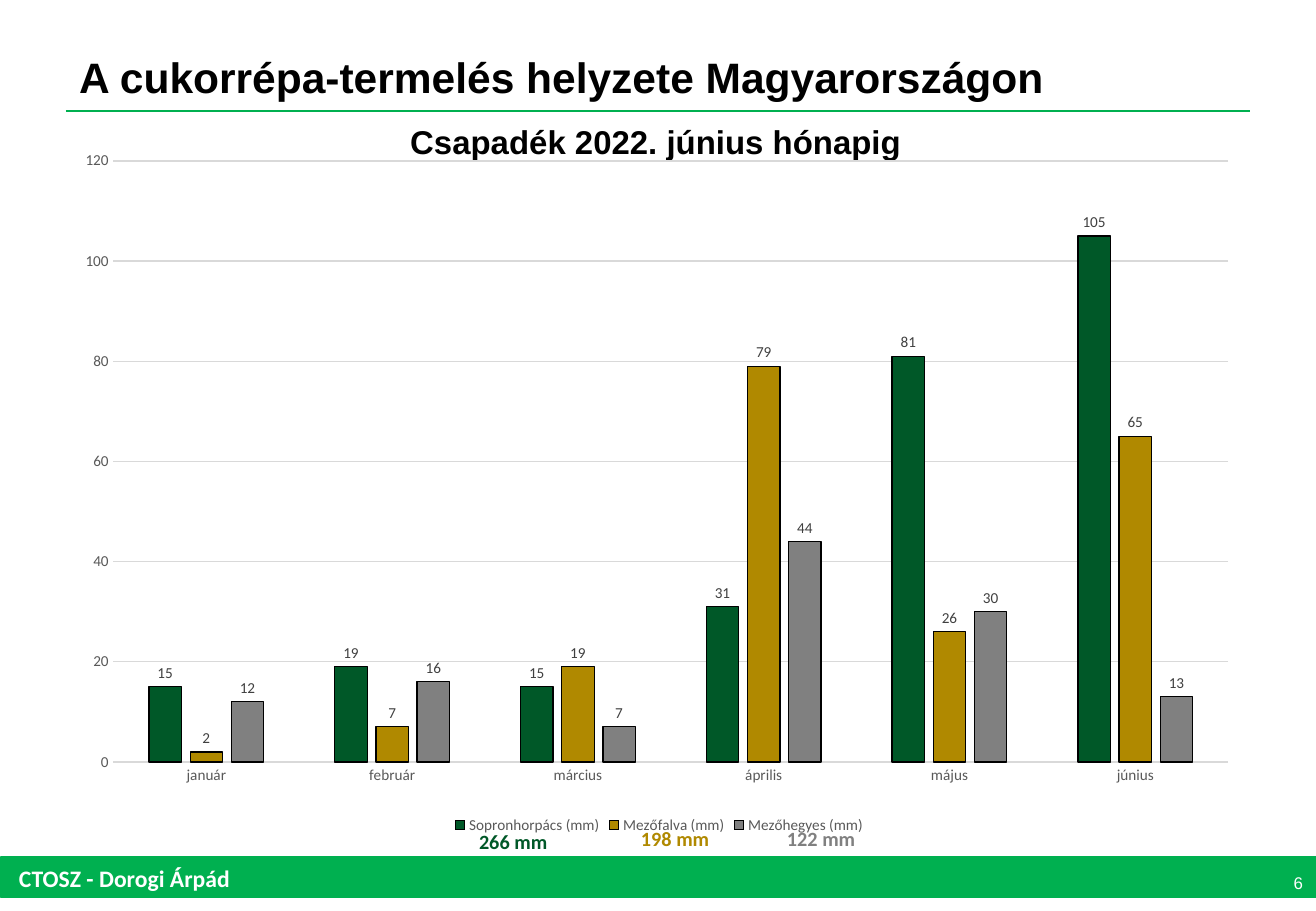
from lxml import etree
from pptx import Presentation
from pptx.chart.data import CategoryChartData
from pptx.dml.color import RGBColor
from pptx.enum.chart import XL_CHART_TYPE, XL_LABEL_POSITION, XL_LEGEND_POSITION, XL_TICK_MARK
from pptx.enum.shapes import MSO_CONNECTOR, MSO_SHAPE
from pptx.enum.text import MSO_ANCHOR, PP_ALIGN
from pptx.oxml import parse_xml
from pptx.oxml.ns import nsdecls, qn
from pptx.util import Pt

EMU_PER_PX = 7526
COLUMNS = XL_CHART_TYPE.COLUMN_CLUSTERED
OUTSIDE = XL_LABEL_POSITION.OUTSIDE_END
BOTTOM = XL_LEGEND_POSITION.BOTTOM
NO_TICK = XL_TICK_MARK.NONE
STRAIGHT = MSO_CONNECTOR.STRAIGHT
RECTANGLE = MSO_SHAPE.RECTANGLE
TOP, MIDDLE = MSO_ANCHOR.TOP, MSO_ANCHOR.MIDDLE
LEFT, CENTER, RIGHT = PP_ALIGN.LEFT, PP_ALIGN.CENTER, PP_ALIGN.RIGHT

COLORS = {
    "green": "00B050", "black": "000000", "white": "FFFFFF",
    "forest": "005828", "gold": "B08900", "gray": "808080",
    "axis": "595959", "label": "404040", "grid": "D9D9D9",
}
MONTHS = ["január", "február", "március", "április", "május", "június"]
STATIONS = [
    ("Sopronhorpács (mm)", "forest", [15, 19, 15, 31, 81, 105]),
    ("Mezőfalva (mm)", "gold", [2, 7, 19, 79, 26, 65]),
    ("Mezőhegyes (mm)", "gray", [12, 16, 7, 44, 30, 13]),
]
TOTALS = [
    ("266 mm", "forest", (467, 823, 143, 36)),
    ("198 mm", "gold", (629, 820, 106, 36)),
    ("122 mm", "gray", (775, 820, 163, 36)),
]
PLOT_LAYOUT = {"x": 0.04, "y": 0.03, "w": 0.94, "h": 0.86}
WIDE_INSETS = (15, 7)
NARROW_INSETS = (12, 6)


def px(*lengths):
    """Turn px lengths into EMU."""
    return [length * EMU_PER_PX for length in lengths]


def rgb(name):
    """Return a named colour."""
    return RGBColor.from_string(COLORS[name])


class SlideBuilder:
    """Holds the style and the current slide."""

    def __init__(self, deck):
        """Add a title-only slide to the deck."""
        self.page = deck.slides.add_slide(deck.slide_layouts[5])
        self.shapes = self.page.shapes

    def style(self, font, size, color, bold=False, name="Calibri"):
        """Apply format values to a font."""
        values = {"size": Pt(size), "bold": bold, "name": name}
        for key, value in values.items():
            setattr(font, key, value)
        font.color.rgb = rgb(color)

    def outline(self, line, color, width=0.75):
        """Set the colour and width of a line."""
        line.color.rgb = rgb(color)
        line.width = Pt(width)

    def fill_text(self, box, text, align, anchor, insets, wrap, **font):
        """Fill a box with one formatted paragraph."""
        side, edge = px(*insets)
        values = {
            "word_wrap": wrap, "vertical_anchor": anchor,
            "margin_left": side, "margin_right": side,
            "margin_top": edge, "margin_bottom": edge,
        }
        for key, value in values.items():
            setattr(box.text_frame, key, value)
        para = box.text_frame.paragraphs[0]
        para.alignment = align
        span = para.add_run()
        span.text = text
        self.style(span.font, **font)

    def title(self, text, place, **font):
        """Place and format the title."""
        box = self.shapes.title
        box.left, box.top, box.width, box.height = px(*place)
        self.fill_text(box, text, LEFT, TOP, WIDE_INSETS, True, **font)

    def text(self, text, place, align=LEFT, anchor=TOP,
             insets=NARROW_INSETS, wrap=True, **font):
        """Add a text box."""
        box = self.shapes.add_textbox(*px(*place))
        self.fill_text(box, text, align, anchor, insets, wrap, **font)

    def band(self, place, color):
        """Add a filled rectangle."""
        shape = self.shapes.add_shape(RECTANGLE, *px(*place))
        shape.shadow.inherit = False
        shape.fill.solid()
        shape.fill.fore_color.rgb = rgb(color)
        self.outline(shape.line, color, 2)

    def rule(self, ends, color):
        """Add a straight line."""
        line = self.shapes.add_connector(STRAIGHT, *px(*ends))
        self.outline(line.line, color)
        etree.SubElement(line._element.spPr, qn("a:effectLst"))

    def columns(self, place, months, stations):
        """Add the clustered column chart."""
        data = CategoryChartData()
        data.categories = months
        for name, _, values in stations:
            data.add_series(name, values)
        chart = self.shapes.add_chart(COLUMNS, *px(*place), data).chart
        chart.has_title = False
        self.style(chart.font, 10, "black")
        chart.has_legend = True
        chart.legend.position = BOTTOM
        chart.legend.include_in_layout = False
        self.style(chart.legend.font, 9, "axis")
        self.axes(chart)
        plot = chart.plots[0]
        plot.vary_by_categories = False
        plot.gap_width, plot.overlap = 219, -27
        for series, (_, color, _) in zip(plot.series, stations):
            self.series(series, color)
        self.plot_area(chart)

    def axes(self, chart):
        """Format both axes and the grid."""
        for axis in (chart.category_axis, chart.value_axis):
            axis.major_tick_mark = axis.minor_tick_mark = NO_TICK
            self.style(axis.tick_labels.font, 9, "axis")
        self.outline(chart.category_axis.format.line, "grid")
        scale = chart.value_axis
        scale.minimum_scale, scale.maximum_scale, scale.major_unit = 0, 120, 20
        scale.format.line.fill.background()
        self.outline(scale.major_gridlines.format.line, "grid")

    def series(self, series, color):
        """Colour and label one series."""
        series.format.fill.solid()
        series.format.fill.fore_color.rgb = rgb(color)
        self.outline(series.format.line, "black")
        labels = series.data_labels
        labels.show_value = True
        labels.position = OUTSIDE
        labels.number_format = "0"
        labels.number_format_is_linked = False
        self.style(labels.font, 9, "label")

    def plot_area(self, chart):
        """Fix the inner plot area inside the chart."""
        modes = "".join(f'<c:{key}Mode val="edge"/>' for key in "xy")
        sizes = "".join(f'<c:{key} val="{value}"/>' for key, value in PLOT_LAYOUT.items())
        layout = parse_xml(
            f'<c:layout {nsdecls("c")}><c:manualLayout><c:layoutTarget val="inner"/>'
            f"{modes}{sizes}</c:manualLayout></c:layout>")
        area = chart._chartSpace.chart.plotArea
        for old in area.findall(qn("c:layout")):
            area.remove(old)
        area.insert(0, layout)


def main():
    """Build the rainfall slide."""
    deck = Presentation()
    deck.slide_width, deck.slide_height = px(1316, 911)
    slide = SlideBuilder(deck)
    slide.rule((66, 111, 1250, 111), "green")
    slide.band((1, 858, 1316, 38), "green")
    slide.text("CTOSZ - Dorogi Árpád", (7, 858, 267, 41), wrap=False,
               size=14, color="white", bold=True)
    slide.title("A cukorrépa-termelés helyzete Magyarországon", (64, 44, 1015, 66),
                size=25.2, color="black", bold=True, name="Arial")
    slide.text("6", (1265, 858, 53, 49), RIGHT, MIDDLE, WIDE_INSETS,
               size=10, color="white", name="Arial")
    slide.text("Csapadék 2022. június hónapig", (63, 115, 1186, 66), CENTER,
               insets=WIDE_INSETS, size=19.5, color="black", bold=True, name="Arial")
    slide.columns((66, 140, 1186, 699), MONTHS, STATIONS)
    for total, color, place in TOTALS:
        slide.text(total, place, size=12, color=color, bold=True)
    deck.save("out.pptx")


if __name__ == "__main__":
    main()
